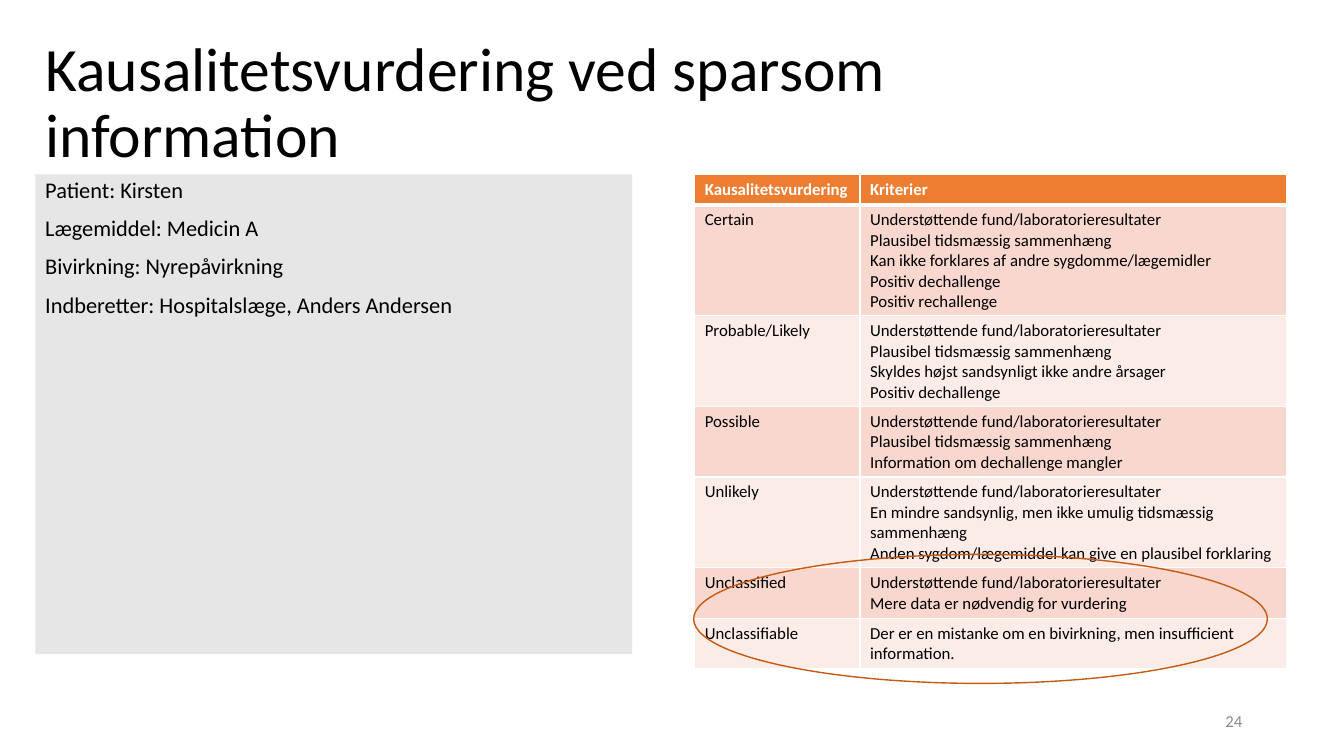
from lxml.etree import SubElement
from pptx import Presentation
from pptx.dml.color import RGBColor
from pptx.enum.shapes import MSO_SHAPE
from pptx.enum.text import MSO_ANCHOR, PP_ALIGN
from pptx.oxml.ns import qn
from pptx.util import Inches, Pt

FONT = "Calibri"
COLORS = {
    "text": "000000", "white": "FFFFFF", "number": "8C8C8C",
    "panel": "E7E6E6", "head": "ED7D31", "dark": "F8D7CE",
    "light": "FCECE8", "ring": "C55A11",
}

CASE = [
    "Patient: Kirsten",
    "Lægemiddel: Medicin A",
    "Bivirkning: Nyrepåvirkning",
    "Indberetter: Hospitalslæge, Anders Andersen",
]
FINDINGS = "Understøttende fund/laboratorieresultater"
TIMING = "Plausibel tidsmæssig sammenhæng"

# Row height, category, criteria
ROWS = [
    (0.27, "Kausalitetsvurdering", ["Kriterier"]),
    (0.93, "Certain", [
        FINDINGS, TIMING,
        "Kan ikke forklares af andre sygdomme/lægemidler",
        "Positiv dechallenge", "Positiv rechallenge"]),
    (0.77, "Probable/Likely", [
        FINDINGS, TIMING,
        "Skyldes højst sandsynligt ikke andre årsager",
        "Positiv dechallenge"]),
    (0.6, "Possible", [
        FINDINGS, TIMING, "Information om dechallenge mangler"]),
    (0.6, "Unlikely", [
        FINDINGS,
        "En mindre sandsynlig, men ikke umulig tidsmæssig sammenhæng",
        "Anden sygdom/lægemiddel kan give en plausibel forklaring"]),
    (0.43, "Unclassified", [
        FINDINGS, "Mere data er nødvendig for vurdering"]),
    (0.41, "Unclassifiable", [
        "Der er en mistanke om en bivirkning, men insufficient information."]),
]


def color(name):
    return RGBColor.from_string(COLORS[name])


def write(frame, lines, size, tone="text", bold=False,
          align=PP_ALIGN.LEFT, spacing=1.0, before=0):
    frame.word_wrap = True
    for i, line in enumerate(lines):
        para = frame.add_paragraph() if i else frame.paragraphs[0]
        para.alignment = align
        para.line_spacing = spacing
        para.space_before = Pt(before if i else 0)
        run = para.add_run()
        run.text = line
        run.font.name = FONT
        run.font.size = Pt(size)
        run.font.bold = bold
        run.font.color.rgb = color(tone)


def add_text(slide, box, lines, size, fill=None,
             anchor=MSO_ANCHOR.MIDDLE, **style):
    shape = slide.shapes.add_textbox(*map(Inches, box))
    if fill:
        shape.fill.solid()
        shape.fill.fore_color.rgb = color(fill)
    shape.text_frame.vertical_anchor = anchor
    write(shape.text_frame, lines, size, **style)


def add_ring(slide, box):
    ring = slide.shapes.add_shape(MSO_SHAPE.OVAL, *map(Inches, box))
    ring.shadow.inherit = False
    ring.fill.background()
    ring.line.color.rgb = color("ring")
    ring.line.width = Pt(1)


def set_edges(cell, row):
    widths = {"L": 1, "R": 1, "T": 3 if row == 1 else 1,
              "B": 3 if row == 0 else 1}
    props = cell._tc.get_or_add_tcPr()
    for side, width in widths.items():
        edge = SubElement(props, qn(f"a:ln{side}"), w=str(Pt(width)))
        fill = SubElement(edge, qn("a:solidFill"))
        SubElement(fill, qn("a:srgbClr"), val=COLORS["white"])


def add_grid(slide, box, widths, rows):
    frame = slide.shapes.add_table(len(rows), len(widths), *map(Inches, box))
    table = frame.table
    for col, width in zip(table.columns, widths):
        col.width = Inches(width)
    for r, (height, label, points) in enumerate(rows):
        table.rows[r].height = Inches(height)
        head = r == 0
        fill = "head" if head else ("dark" if r % 2 else "light")
        for c, lines in enumerate([[label], points]):
            cell = table.cell(r, c)
            set_edges(cell, r)
            cell.fill.solid()
            cell.fill.fore_color.rgb = color(fill)
            write(cell.text_frame, lines, 12,
                  tone="white" if head else "text", bold=head)


def main():
    deck = Presentation()
    deck.slide_width, deck.slide_height = Inches(13.33), Inches(7.5)
    slide = deck.slides.add_slide(deck.slide_layouts[6])

    # Title and slide number
    add_text(slide, (0.35, 0.31, 11.5, 1.45),
             ["Kausalitetsvurdering ved sparsom information"], 44, spacing=0.9)
    add_text(slide, (9.42, 6.95, 3, 0.4), ["24"], 12,
             tone="number", align=PP_ALIGN.RIGHT)

    # Case panel
    add_text(slide, (0.35, 1.73, 5.92, 4.76), CASE, 16, fill="panel",
             anchor=MSO_ANCHOR.TOP, spacing=0.9, before=10)

    # Criteria table with the last two rows ringed
    add_grid(slide, (6.89, 1.73, 5.87, 4.9), (1.64, 4.23), ROWS)
    add_ring(slide, (6.88, 5.5, 5.69, 1.28))

    deck.save("out.pptx")


if __name__ == "__main__":
    main()
